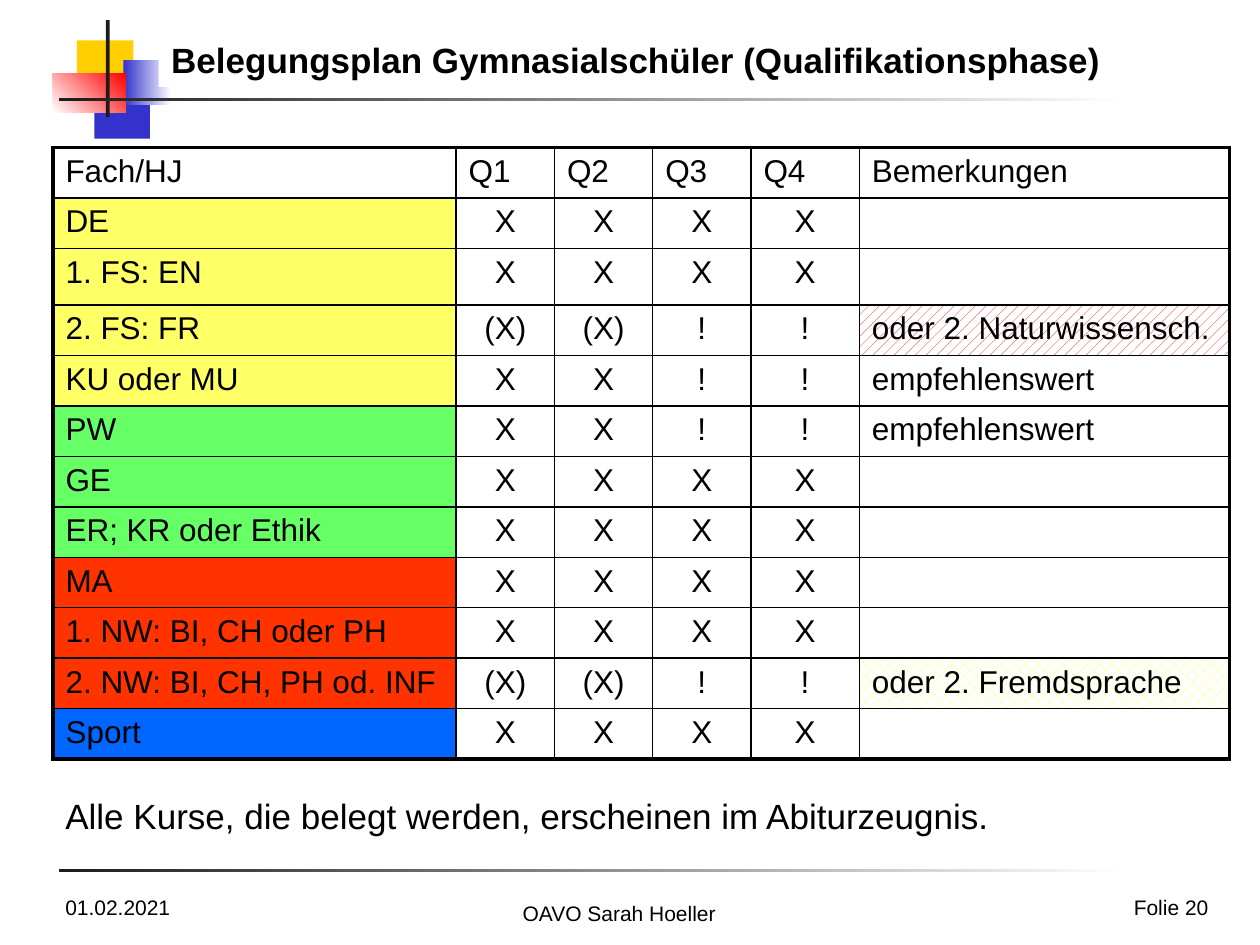
from pptx import Presentation
from pptx.dml.color import RGBColor
from pptx.enum import dml, shapes, text
from pptx.oxml import parse_xml
from pptx.oxml.ns import nsdecls
from pptx.util import Inches, Pt

BLACK, WHITE, DARK, BLUE, GOLD = "000000", "FFFFFF", "1C1C1C", "3333CC", "FFCF01"
YELLOW, GREEN, RED, SPORT = "FFFF66", "66FF66", "FF3300", "0066FF"
LEFT, MID, RIGHT = text.PP_ALIGN.LEFT, text.PP_ALIGN.CENTER, text.PP_ALIGN.RIGHT

HEAD = ["Fach/HJ", "Q1", "Q2", "Q3", "Q4", "Bemerkungen"]
FULL, HALF, OPEN = ["X"] * 4, ["(X)", "(X)", "!", "!"], ["X", "X", "!", "!"]
PLAN = [
    ("DE", YELLOW, FULL, ""),
    ("1. FS: EN", YELLOW, FULL, ""),
    ("2. FS: FR", YELLOW, HALF, "oder 2. Naturwissensch."),
    ("KU oder MU", YELLOW, OPEN, "empfehlenswert"),
    ("PW", GREEN, OPEN, "empfehlenswert"),
    ("GE", GREEN, FULL, ""),
    ("ER; KR oder Ethik", GREEN, FULL, ""),
    ("MA", RED, FULL, ""),
    ("1. NW: BI, CH oder PH", RED, FULL, ""),
    ("2. NW: BI, CH, PH od. INF", RED, HALF, "oder 2. Fremdsprache"),
    ("Sport", SPORT, FULL, ""),
]
HATCH = {
    "oder 2. Naturwissensch.": (dml.MSO_PATTERN.PERCENT_20, "FF0000"),
    "oder 2. Fremdsprache": (dml.MSO_PATTERN.PERCENT_30, YELLOW),
}
COLS = [3.2, 0.78, 0.78, 0.78, 0.86, 2.94]
ROWS = [0.4, 0.4, 0.45] + [0.4] * 9


def rgb(code):
    return RGBColor.from_string(code)


def paint(fill, color):
    fill.solid()
    fill.fore_color.rgb = rgb(color)


def write(frame, words, size=18, bold=False, align=LEFT):
    par = frame.paragraphs[0]
    par.alignment = align
    par.font.size = Pt(size)
    if words:
        font = par.add_run()
        font.text = words
        font = font.font
        font.name, font.size, font.bold = "Arial", Pt(size), bold
        font.color.rgb = rgb(BLACK)


def label(slide, words, box, fill=None, anchor=text.MSO_ANCHOR.TOP, **style):
    shape = slide.shapes.add_textbox(*map(Inches, box))
    shape.text_frame.word_wrap = True
    shape.text_frame.vertical_anchor = anchor
    if fill:
        paint(shape.fill, fill)
    write(shape.text_frame, words, **style)


def block(slide, box, color, end=None, angle=0):
    """Draw a bare rectangle, fading from color to end if end is given."""
    shape = slide.shapes.add_shape(shapes.MSO_SHAPE.RECTANGLE, *map(Inches, box))
    shape.shadow.inherit = False
    shape.line.fill.background()
    if end:
        shape.fill.gradient()
        shape.fill.gradient_angle = angle
        for stop, tone in zip(shape.fill.gradient_stops, (color, end)):
            stop.color.rgb = rgb(tone)
    else:
        paint(shape.fill, color)


def frame(cell, row, col):
    """Give a cell thin borders, heavy along the outside of the table."""
    outer = {"L": col == 0, "R": col == len(COLS) - 1,
             "T": row == 0, "B": row == len(ROWS) - 1}
    props = cell._tc.get_or_add_tcPr()
    for spot, (side, heavy) in enumerate(outer.items()):
        width = Pt(2.25 if heavy else 1)
        props.insert(spot, parse_xml(
            f'<a:ln{side} {nsdecls("a")} w="{width}"><a:solidFill>'
            f'<a:srgbClr val="{BLACK}"/></a:solidFill></a:ln{side}>'))


def grid(slide):
    box = map(Inches, (0.42, 1.17, sum(COLS), sum(ROWS)))
    table = slide.shapes.add_table(len(ROWS), len(COLS), *box).table
    table.first_row = table.horz_banding = False
    for col, width in zip(table.columns, COLS):
        col.width = Inches(width)
    for row, height in zip(table.rows, ROWS):
        row.height = Inches(height)
    lines = [HEAD] + [[name, *marks, note] for name, _, marks, note in PLAN]
    tones = [None] + [tone for _, tone, _, _ in PLAN]
    for r, (line, tone) in enumerate(zip(lines, tones)):
        for c, words in enumerate(line):
            cell = table.cell(r, c)
            write(cell.text_frame, words, align=MID if r and 0 < c < 5 else LEFT)
            if tone and c == 0:
                paint(cell.fill, tone)
            elif words in HATCH:
                cell.fill.patterned()
                cell.fill.pattern, ink = HATCH[words]
                cell.fill.fore_color.rgb = rgb(ink)
                cell.fill.back_color.rgb = rgb(WHITE)
            else:
                cell.fill.background()
            frame(cell, r, c)


def motif(slide):
    block(slide, (0.61, 0.32, 0.45, 0.35), GOLD)
    block(slide, (0.85, 0.72, 0.34, 0.35), GOLD, WHITE)
    block(slide, (0.75, 0.75, 0.44, 0.35), BLUE)
    block(slide, (0.98, 0.48, 0.38, 0.35), BLUE, WHITE)
    block(slide, (0.42, 0.58, 0.58, 0.31), WHITE, "FF0000", angle=45)
    block(slide, (0.84, 0.16, 0.03, 0.77), DARK)
    for top in (0.78, 6.9):
        block(slide, (0.47, top, 8.47, 0.02), DARK, WHITE)


def main():
    deck = Presentation()
    deck.slide_width, deck.slide_height = Inches(10), Inches(7.5)
    slide = deck.slides.add_slide(deck.slide_layouts[6])
    motif(slide)
    label(slide, "Folie 20", (7.36, 7.05, 2.33, 0.22), size=12, align=RIGHT)
    label(slide, "01.02.2021", (0.42, 7.05, 2.33, 0.3), size=12)
    label(slide, "OAVO Sarah Hoeller", (3.33, 7.1, 3.17, 0.24), size=12, align=MID)
    label(slide, "Belegungsplan Gymnasialschüler (Qualifikationsphase)",
          (1.26, 0.31, 7.71, 0.38), fill=WHITE, anchor=text.MSO_ANCHOR.BOTTOM,
          size=20, bold=True)
    grid(slide)
    label(slide, "Alle Kurse, die belegt werden, erscheinen im Abiturzeugnis.",
          (0.42, 6.26, 8.25, 0.43), size=20)
    deck.save("out.pptx")


if __name__ == "__main__":
    main()
